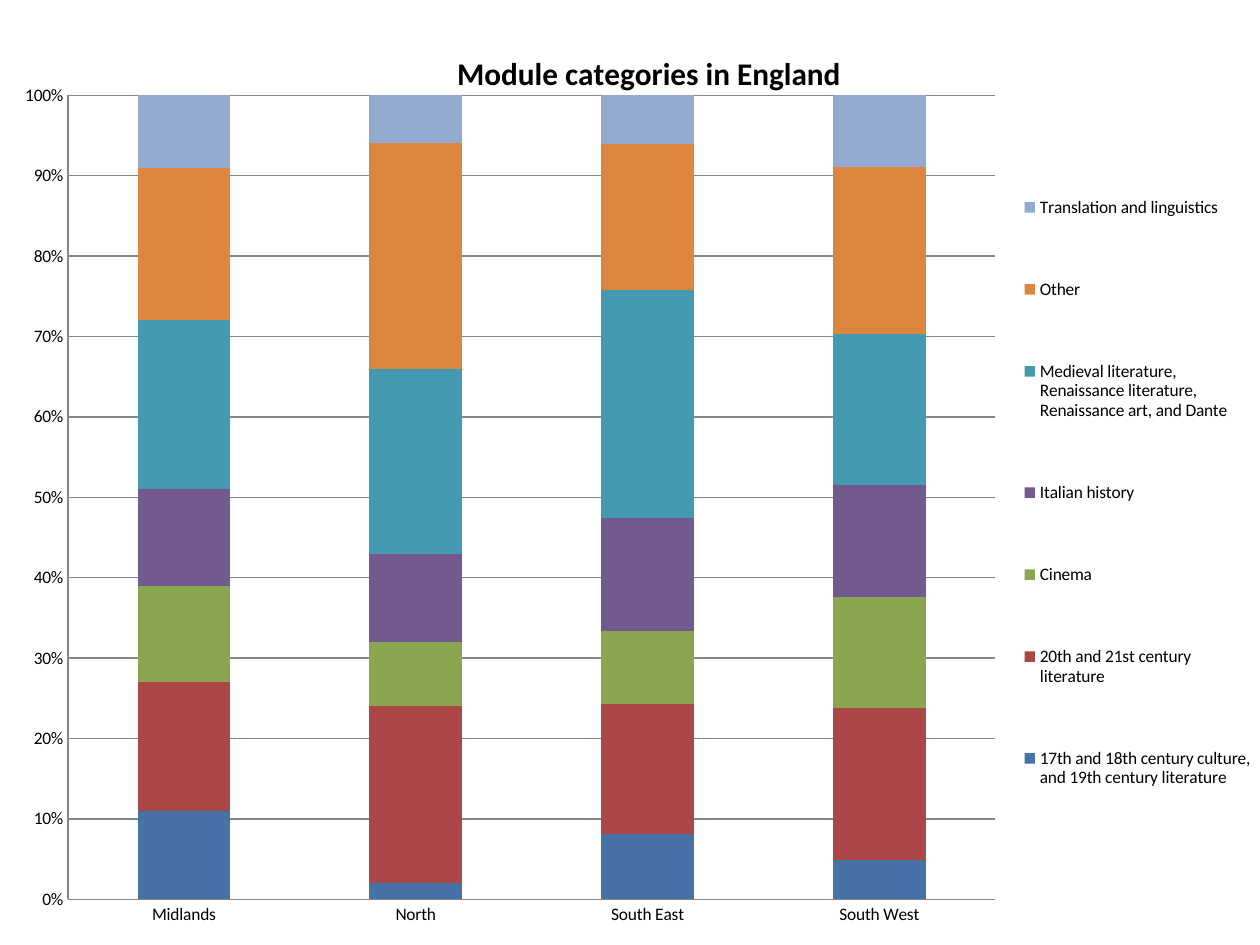
import dataclasses

import pptx
import pptx.chart.data
import pptx.dml.color
import pptx.enum.chart
import pptx.oxml
import pptx.oxml.ns
import pptx.util


@dataclasses.dataclass(frozen=True)
class Theme:
    font: str = "Calibri"
    text: str = "000000"
    line: str = "868686"
    background: str = "FFFFFF"
    title_size: int = 18
    body_size: int = 10
    line_width: float = 0.75


THEME = Theme()
SLIDE_WIDTH, SLIDE_HEIGHT = 10, 7.5
CHART_BOX = (0.02, 0.0173, 0.98, 0.9827)
PLOT_BOX = {"x": 0.027, "y": 0.085, "w": 0.757, "h": 0.866}
LEGEND_BOX = {"x": 0.805, "y": 0.128, "w": 0.19, "h": 0.77}
TITLE_POSITION = {"x": 0.34, "y": 0.032}

REGIONS = ("Midlands", "North", "South East", "South West")
MODULES = (
    ("17th and 18th century culture, and 19th century literature", (11, 2, 8, 5), "4672A8"),
    ("20th and 21st century literature", (16, 22, 16, 19), "AB4744"),
    ("Cinema", (12, 8, 9, 14), "8AA64F"),
    ("Italian history", (12, 11, 14, 14), "725990"),
    ("Medieval literature, Renaissance literature, Renaissance art, and Dante",
     (21, 23, 28, 19), "4299B0"),
    ("Other", (19, 28, 18, 21), "DC853E"),
    ("Translation and linguistics", (9, 6, 6, 9), "93A9CF"),
)


def rgb(value):
    return pptx.dml.color.RGBColor.from_string(value)


def format_font(font, size=THEME.body_size, bold=False, color=THEME.text):
    font.name = THEME.font
    font.size = pptx.util.Pt(size)
    font.bold = bold
    font.color.rgb = rgb(color)


def write_text(text_frame, text, **text_format):
    run = text_frame.paragraphs[0].add_run()
    run.text = text
    format_font(run.font, **text_format)


def format_line(line):
    line.color.rgb = rgb(THEME.line)
    line.width = pptx.util.Pt(THEME.line_width)


def place_element(element, box, inner=False):
    target = '<c:layoutTarget val="inner"/>' if inner else ""
    modes = "".join(f'<c:{key}Mode val="edge"/>' for key in box if key in "xy")
    values = "".join(f'<c:{key} val="{value}"/>' for key, value in box.items())
    layout = pptx.oxml.parse_xml(
        f'<c:layout {pptx.oxml.ns.nsdecls("c")}>'
        f"<c:manualLayout>{target}{modes}{values}</c:manualLayout></c:layout>"
    )
    for previous in element.findall(pptx.oxml.ns.qn("c:layout")):
        element.remove(previous)
    anchors = [
        child for child in element
        if child.tag in map(pptx.oxml.ns.qn, ("c:tx", "c:legendPos"))
    ]
    if anchors:
        anchors[-1].addnext(layout)
    else:
        element.insert(0, layout)


def add_stacked_chart(slide):
    data = pptx.chart.data.CategoryChartData(number_format="0")
    data.categories = REGIONS
    for name, values, _ in MODULES:
        data.add_series(name, values)
    left, top, width, height = CHART_BOX
    chart = slide.shapes.add_chart(
        pptx.enum.chart.XL_CHART_TYPE.COLUMN_STACKED_100,
        pptx.util.Inches(left * SLIDE_WIDTH),
        pptx.util.Inches(top * SLIDE_HEIGHT),
        pptx.util.Inches(width * SLIDE_WIDTH),
        pptx.util.Inches(height * SLIDE_HEIGHT),
        data,
    ).chart
    format_font(chart.font)
    return chart


def format_columns(chart):
    plot = chart.plots[0]
    plot.gap_width = 150
    plot.overlap = 100
    plot.vary_by_categories = False
    for series, (_, _, color) in zip(plot.series, MODULES):
        series.format.fill.solid()
        series.format.fill.fore_color.rgb = rgb(color)
    plot_area = chart.element.find(".//" + pptx.oxml.ns.qn("c:plotArea"))
    place_element(plot_area, PLOT_BOX, inner=True)


def format_axes(chart):
    for axis in (chart.category_axis, chart.value_axis):
        axis.major_tick_mark = pptx.enum.chart.XL_TICK_MARK.NONE
        axis.minor_tick_mark = pptx.enum.chart.XL_TICK_MARK.NONE
        format_line(axis.format.line)
        format_font(axis.tick_labels.font)
    value_axis = chart.value_axis
    value_axis.minimum_scale = 0
    value_axis.maximum_scale = 1
    value_axis.major_unit = 0.1
    value_axis.tick_labels.number_format = "0%"
    value_axis.tick_labels.number_format_is_linked = False
    value_axis.has_major_gridlines = True
    format_line(value_axis.major_gridlines.format.line)


def add_legend(chart):
    chart.has_legend = True
    legend = chart.legend
    legend.position = pptx.enum.chart.XL_LEGEND_POSITION.RIGHT
    legend.include_in_layout = False
    format_font(legend.font)
    place_element(chart.element.find(".//" + pptx.oxml.ns.qn("c:legend")), LEGEND_BOX)


def add_chart_title(chart, text):
    chart.has_title = True
    write_text(chart.chart_title.text_frame, text, size=THEME.title_size, bold=True)
    title = chart.element.find(".//" + pptx.oxml.ns.qn("c:title"))
    place_element(title, TITLE_POSITION)


def main():
    presentation = pptx.Presentation()
    presentation.slide_width = pptx.util.Inches(SLIDE_WIDTH)
    presentation.slide_height = pptx.util.Inches(SLIDE_HEIGHT)
    slide = presentation.slides.add_slide(presentation.slide_layouts[6])
    slide.background.fill.solid()
    slide.background.fill.fore_color.rgb = rgb(THEME.background)
    chart = add_stacked_chart(slide)
    format_columns(chart)
    format_axes(chart)
    add_legend(chart)
    add_chart_title(chart, "Module categories in England")
    presentation.save("out.pptx")


if __name__ == "__main__":
    main()
